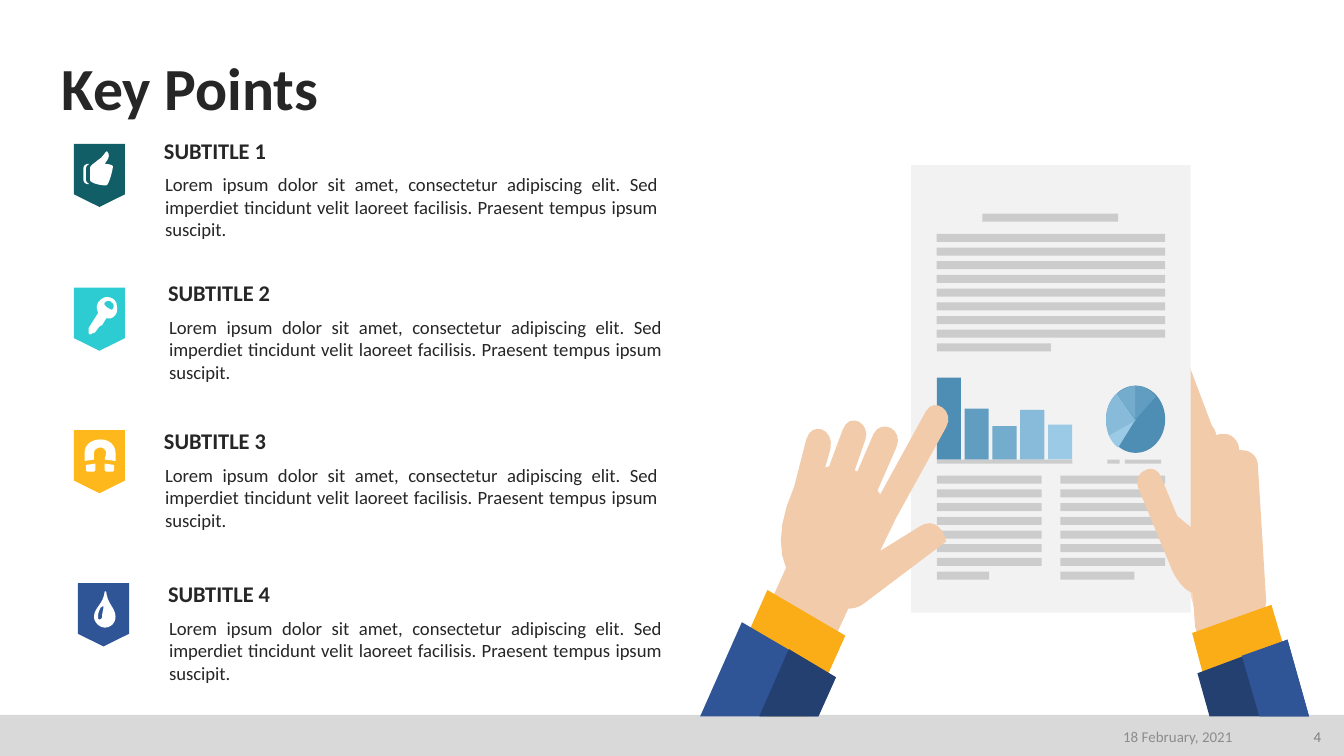
from pptx import Presentation
from pptx.dml.color import RGBColor
from pptx.enum.shapes import MSO_SHAPE as Preset
from pptx.enum.text import MSO_ANCHOR as Anchor, MSO_AUTO_SIZE as AutoSize, PP_ALIGN as Align
from pptx.util import Inches, Pt

FONT, INK, WHITE = "Calibri", "262626", "FFFFFF"
SKIN, CUFF, SLEEVE, SLEEVE_SHADE = "F2CBAA", "FBAD18", "305597", "244071"
PAPER, RULE = "F2F2F2", "CDCCCC"
BLUES = ["4E8EB4", "609DC1", "74ACCD", "88BBDA", "9BCAE6"]
BODY = ("Lorem ipsum dolor sit amet, consectetur adipiscing elit. Sed imperdiet "
        "tincidunt velit laoreet facilisis. Praesent tempus ipsum suscipit.")

# Outlines use M (move), L (lines), C (cubic curves) and Z (close), in inches.
THUMB_UP = """M .78 1.22 C .78 1.21 .83 1.17 .8 1.13 .79 1.11 .77 1.17 .73 1.19
    .71 1.21 .67 1.23 .67 1.25 L .67 1.34 C .67 1.36 .74 1.38 .79 1.38
    .81 1.38 .84 1.26 .84 1.24 .84 1.22 .78 1.22 .78 1.22 Z
    M .66 1.22 C .65 1.22 .62 1.22 .62 1.26 L .62 1.33 C .62 1.37 .65 1.37 .66 1.37
    .67 1.37 .64 1.36 .64 1.34 L .64 1.25 C .64 1.23 .67 1.22 .66 1.22 Z"""
KEY = """M .87 2.28 C .87 2.23 .83 2.21 .79 2.21 .75 2.22 .72 2.25 .72 2.29
    .72 2.3 .73 2.32 .73 2.33 L .66 2.44 .66 2.48 .67 2.49 .69 2.48
    C .7 2.48 .7 2.48 .71 2.47 L .74 2.43 .76 2.42 .79 2.37
    C .8 2.37 .82 2.37 .82 2.37 .86 2.36 .88 2.32 .87 2.28 Z
    M .84 2.3 C .83 2.31 .82 2.3 .8 2.29 .79 2.28 .77 2.27 .78 2.25
    .79 2.24 .82 2.23 .83 2.25 .85 2.26 .85 2.28 .84 2.3 Z"""
MAGNET = """M .78 3.5 L .79 3.51 .84 3.51 .85 3.5 .85 3.46 .78 3.45 Z
    M .64 3.46 L .64 3.5 .65 3.51 .7 3.51 .71 3.5 .71 3.45 Z
    M .63 3.38 L .63 3.43 .7 3.42 .7 3.37 C .7 3.35 .72 3.33 .75 3.33
    .77 3.33 .79 3.35 .79 3.37 L .78 3.42 .86 3.43 .86 3.37
    C .86 3.31 .81 3.27 .75 3.27 .68 3.27 .63 3.31 .63 3.37 Z"""
DROP = """M .79 4.4 L .78 4.4 C .77 4.5 .7 4.52 .7 4.59 .7 4.63 .74 4.67 .78 4.67
    .83 4.67 .86 4.63 .86 4.59 .86 4.52 .8 4.5 .79 4.4 Z
    M .77 4.51 L .77 4.52 C .77 4.54 .76 4.56 .76 4.59 .76 4.6 .75 4.61 .74 4.61
    .73 4.61 .73 4.6 .73 4.59 .73 4.56 .74 4.54 .75 4.52 .76 4.52 .76 4.51 .77 4.51 Z"""

# Badge left, badge top, badge colour, icon, text left, text top
POINTS = [(.55, 1.07, "115E67", THUMB_UP, 1.22, 1.02),
          (.55, 2.14, "2DCCD3", KEY, 1.25, 2.08),
          (.55, 3.2, "FFB81C", MAGNET, 1.22, 3.18),
          (.58, 4.34, SLEEVE, DROP, 1.25, 4.32)]

RIGHT_HAND_BACK = [
    ("FED6B7", "M 8.98 4.85 L 9.45 4.68 9.33 4.26 9.35 3.76 8.69 3.84 Z"),
    (SKIN, """M 9.24 3.35 C 9.31 3.35 9.36 3.4 9.36 3.47 L 9.42 4.46
        C 9.43 4.52 9.38 4.58 9.32 4.59 L 9.3 4.59 9.31 4.66
        C 9.31 4.73 9.26 4.79 9.2 4.8 9.15 4.8 9.11 4.78 9.09 4.74
        9.07 4.75 9.05 4.77 9.02 4.77 8.95 4.78 8.89 4.71 8.89 4.64 L 8.8 3.27
        C 8.79 3.19 8.85 3.13 8.92 3.12 8.98 3.12 9.04 3.17 9.05 3.24
        9.06 3.23 9.08 3.23 9.1 3.23 9.16 3.22 9.22 3.28 9.22 3.35 Z"""),
    (SKIN, """M 8.69 2.54 C 8.73 2.52 8.78 2.54 8.8 2.59 L 9.09 3.36 9.1 3.37 8.91 3.37
        8.65 2.67 C 8.62 2.62 8.64 2.57 8.69 2.54 Z"""),
]
PIE_SLICES = [
    (BLUES[4], "M 8.32 3.33 C 8.29 3.31 8.27 3.28 8.25 3.24 L 8.45 3.12 Z"),
    (BLUES[3], """M 8.25 3.24 C 8.24 3.21 8.23 3.17 8.23 3.13 8.23 3.04 8.26 2.97 8.31 2.93
        L 8.45 3.13 Z"""),
    (BLUES[2], "M 8.31 2.93 C 8.35 2.9 8.4 2.87 8.45 2.87 L 8.45 3.12 Z"),
    (BLUES[1], "M 8.45 2.87 L 8.45 3.12 8.6 2.95 C 8.56 2.9 8.51 2.87 8.45 2.87 Z"),
]
HANDS_FRONT = [
    (SKIN, """M 9.24 5.02 L 9.3 5 9.27 4.92 9.02 4.26 C 8.97 4.12 8.88 4.13 8.8 4.16
        L 9.09 4.94 C 9.12 5.01 9.18 5.04 9.24 5.02 Z"""),
    (CUFF, "M 8.87 4.71 L 9.46 4.5 9.56 4.84 8.96 5.05 Z"),
    (SLEEVE_SHADE, "M 8.91 5.01 L 9.58 4.76 9.74 5.33 9 5.33 Z"),
    (SLEEVE, "M 9.24 4.88 L 9.58 4.76 9.74 5.33 9.37 5.33 Z"),
    (SKIN, """M 8.52 3.5 C 8.57 3.47 8.62 3.5 8.64 3.55 L 8.76 3.84 8.98 4.02 9.3 4.23
        9.15 4.59 8.92 4.41 C 8.84 4.44 8.75 4.31 8.72 4.24 L 8.47 3.63
        C 8.45 3.58 8.47 3.52 8.52 3.5 Z"""),
    (SKIN, "M 5.91 4.09 L 6.38 4.38 6.04 5.12 5.57 4.84 Z"),
    (SKIN, """M 6.66 3.87 C 6.63 3.94 6.59 4.01 6.55 4.1 L 6.84 3.92
        C 6.96 3.84 7.03 3.96 7.04 4.03 L 6.43 4.49 C 6.35 4.56 6.2 4.53 6.07 4.46
        5.8 4.31 5.73 4.03 5.91 3.62 L 6 3.27 C 6.04 3.13 6.21 3.19 6.18 3.34
        L 6.14 3.48 6.17 3.47 6.27 3.2 C 6.32 3.06 6.48 3.15 6.44 3.27
        L 6.36 3.5 6.38 3.51 6.5 3.23 C 6.56 3.11 6.73 3.2 6.67 3.33
        L 6.53 3.65 6.55 3.68 6.89 3.06 C 6.95 2.95 7.11 3.06 7.04 3.18 Z"""),
    (CUFF, "M 5.71 4.39 L 6.29 4.73 6.02 5.33 5.71 5.33 5.38 5.13 Z"),
    (SLEEVE, "M 6.09 5.33 L 6.22 5.04 5.52 4.63 5.21 5.33 Z"),
    (SLEEVE_SHADE, "M 6.09 5.33 L 6.22 5.04 5.87 4.83 5.65 5.33 Z"),
]


def rgb(value):
    return RGBColor.from_string(value)


def contours(outline, steps=8):
    """Turn an outline into lists of points, with curves cut into short lines."""
    result = []
    for part in outline.split("Z")[:-1]:
        points, mode, pending = [], "M", []
        for token in part.split():
            if token in "MLC":
                mode = token
                continue
            pending.append(float(token))
            if len(pending) < (6 if mode == "C" else 2):
                continue
            if mode == "C":
                nodes = [points[-1], *zip(pending[::2], pending[1::2])]
                for step in range(1, steps + 1):
                    t = step / steps
                    weights = ((1 - t) ** 3, 3 * t * (1 - t) ** 2, 3 * t * t * (1 - t), t ** 3)
                    points.append(tuple(sum(w * node[axis] for w, node in zip(weights, nodes))
                                        for axis in (0, 1)))
            else:
                points.append(tuple(pending))
            pending = []
        result.append([(Inches(x), Inches(y)) for x, y in points])
    return result


class Painter:
    """Holds the slide, its text style and the shapes being added to."""

    def __init__(self, page):
        self.page = page
        self.shapes = page.shapes

    def start_group(self):
        self.shapes = self.page.shapes.add_group_shape().shapes

    def end_group(self):
        self.shapes = self.page.shapes

    def finish(self, shape, color):
        shape.shadow.inherit = False
        shape.fill.solid()
        shape.fill.fore_color.rgb = rgb(color)
        shape.line.fill.background()

    def preset(self, left, top, width, height, color, kind=Preset.RECTANGLE):
        shape = self.shapes.add_shape(kind, *map(Inches, (left, top, width, height)))
        self.finish(shape, color)

    def outline(self, color, outline):
        first, *others = contours(outline)
        builder = self.shapes.build_freeform(*first[0])
        builder.add_line_segments(first[1:], close=True)
        for points in others:
            builder.move_to(*points[0])
            builder.add_line_segments(points[1:], close=True)
        self.finish(builder.convert_to_shape(), color)

    def rules(self, left, top, width, count, last_width):
        """Draw lines of dummy print, the last one shorter."""
        for row in range(count):
            self.preset(left, top + .102 * row, width if row < count - 1 else last_width, .06, RULE)

    def text(self, left, top, width, height, words, size, color=INK, bold=False,
             align=Align.LEFT, anchor=Anchor.TOP, inset=True, wrap=True, spacing=None):
        box = self.shapes.add_textbox(*map(Inches, (left, top, width, height)))
        frame = box.text_frame
        frame.text = words
        frame.word_wrap = wrap
        frame.vertical_anchor = anchor
        if not wrap:
            frame.auto_size = AutoSize.SHAPE_TO_FIT_TEXT
        if not inset:
            frame.margin_left = frame.margin_right = frame.margin_top = frame.margin_bottom = 0
        para = frame.paragraphs[0]
        para.alignment = align
        if spacing:
            para.line_spacing = spacing
        font = para.runs[0].font
        font.name, font.size, font.bold = FONT, Pt(size), bold
        font.color.rgb = rgb(color)


def draw_report(painter):
    painter.start_group()
    for color, outline in RIGHT_HAND_BACK:
        painter.outline(color, outline)
    painter.preset(6.78, 1.23, 2.08, 3.33, PAPER)
    painter.preset(7.31, 1.59, 1.01, .06, RULE)
    painter.rules(6.97, 1.74, 1.7, 9, .85)
    painter.preset(8.23, 2.87, .44, .5, BLUES[0], Preset.OVAL)
    for color, outline in PIE_SLICES:
        painter.outline(color, outline)
    for index, height in enumerate([.61, .38, .25, .37, .26]):
        painter.preset(6.97 + .207 * index, 3.42 - height, .18, height, BLUES[index])
    for left, width in [(6.97, 1.01), (8.24, .09), (8.37, .27)]:
        painter.preset(left, 3.42, width, .03, RULE)
    for left, last_width in [(6.97, .39), (7.89, .55)]:
        painter.rules(left, 3.54, .78, 8, last_width)
    for color, outline in HANDS_FRONT:
        painter.outline(color, outline)
    painter.end_group()


def main():
    deck = Presentation()
    deck.slide_width, deck.slide_height = Inches(10), Inches(5.625)
    painter = Painter(deck.slides.add_slide(deck.slide_layouts[6]))
    painter.preset(0, 5.32, 10, .305, "D9D9D9")
    draw_report(painter)
    for number, (left, top, color, icon, text_left, text_top) in enumerate(POINTS, 1):
        painter.preset(left, top, .38, .47, color, Preset.FLOWCHART_OFFPAGE_CONNECTOR)
        painter.outline(WHITE, icon)
        painter.text(text_left, text_top, .89, .2, f"SUBTITLE {number}", 12, bold=True,
                     inset=False, wrap=False)
        painter.text(text_left - .09, text_top + .22, 3.86, .64, BODY, 10, align=Align.JUSTIFY)
    painter.text(.46, .4, 9.1, .52, "Key Points", 32, bold=True,
                 anchor=Anchor.BOTTOM, inset=False, spacing=.9)
    for left, width, words, color in [(9.56, .37, "4", "808080"),
                                      (7.02, 2.25, "18 February, 2021", "8C8C8C")]:
        painter.text(left, 5.35, width, .26, words, 8, color, align=Align.RIGHT,
                     anchor=Anchor.MIDDLE)
    deck.save("out.pptx")


if __name__ == "__main__":
    main()
